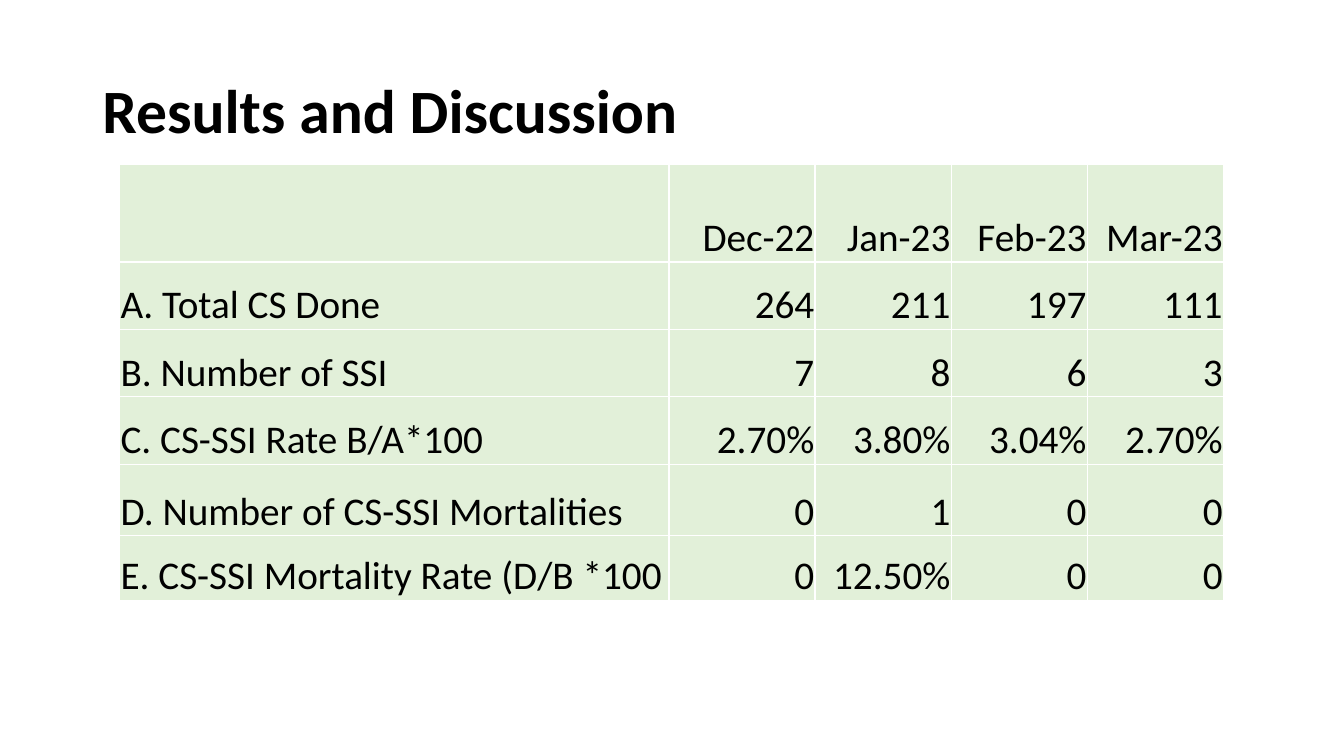
from dataclasses import dataclass

from lxml.etree import SubElement
from pptx import Presentation
from pptx.dml.color import RGBColor
from pptx.enum.text import MSO_ANCHOR as Anchor, PP_ALIGN as Align
from pptx.oxml.ns import qn
from pptx.util import Cm, Pt


@dataclass(frozen=True)
class Theme:
    font: str = "Calibri"
    text: str = "000000"
    cell: str = "E2F0D9"
    border: str = "FFFFFF"
    title_size: int = 44
    table_size: int = 28
    border_width: int = 1


THEME = Theme()

ROWS = [
    ("", "Dec-22", "Jan-23", "Feb-23", "Mar-23"),
    ("A. Total CS Done", "264", "211", "197", "111"),
    ("B. Number of SSI", "7", "8", "6", "3"),
    ("C. CS-SSI Rate B/A*100", "2.70%", "3.80%", "3.04%", "2.70%"),
    ("D. Number of CS-SSI Mortalities", "0", "1", "0", "0"),
    ("E. CS-SSI Mortality Rate (D/B *100", "0", "12.50%", "0", "0"),
]
COLUMN_WIDTHS = [13.84, 3.68, 3.43, 3.43, 3.43]
ROW_HEIGHTS = [2.46, 1.7, 1.7, 1.7, 1.8, 1.63]


def write_text(frame, text, *, size, bold=False, align=Align.LEFT, spacing=None):
    paragraph = frame.paragraphs[0]
    paragraph.alignment = align
    paragraph.line_spacing = spacing
    run = paragraph.add_run()
    run.text = text
    run.font.name = THEME.font
    run.font.size = Pt(size)
    run.font.bold = bold
    run.font.color.rgb = RGBColor.from_string(THEME.text)


def add_title(slide, text):
    box = slide.shapes.add_textbox(Cm(2.33), Cm(1.02), Cm(29.21), Cm(3.68))
    box.text_frame.word_wrap = True
    box.text_frame.vertical_anchor = Anchor.MIDDLE
    write_text(box.text_frame, text, size=THEME.title_size, bold=True, spacing=0.9)


def add_borders(cell):
    """Draw all four sides; the schema wants them ahead of the cell's fill."""
    properties = cell._tc.get_or_add_tcPr()
    for index, side in enumerate(("lnL", "lnR", "lnT", "lnB")):
        line = SubElement(properties, qn(f"a:{side}"), w=str(Pt(THEME.border_width)))
        fill = SubElement(line, qn("a:solidFill"))
        SubElement(fill, qn("a:srgbClr"), val=THEME.border)
        properties.insert(index, line)


def format_cell(cell):
    cell.vertical_anchor = Anchor.BOTTOM
    cell.margin_left = cell.margin_right = cell.margin_top = Cm(0.02)
    cell.margin_bottom = 0
    cell.fill.solid()
    cell.fill.fore_color.rgb = RGBColor.from_string(THEME.cell)
    add_borders(cell)


def add_results_table(slide):
    table = slide.shapes.add_table(
        len(ROWS), len(COLUMN_WIDTHS), Cm(3.02), Cm(4.14),
        Cm(sum(COLUMN_WIDTHS)), Cm(sum(ROW_HEIGHTS)),
    ).table
    table.first_row = table.horz_banding = False
    for column, width in zip(table.columns, COLUMN_WIDTHS):
        column.width = Cm(width)
    for row, height, values in zip(table.rows, ROW_HEIGHTS, ROWS):
        row.height = Cm(height)
        for index, (cell, value) in enumerate(zip(row.cells, values)):
            format_cell(cell)
            if value:
                align = Align.RIGHT if index else Align.LEFT
                write_text(cell.text_frame, value, size=THEME.table_size, align=align)


def main():
    presentation = Presentation()
    presentation.slide_width = Cm(33.87)
    presentation.slide_height = Cm(19.05)
    slide = presentation.slides.add_slide(presentation.slide_layouts[6])
    add_title(slide, "Results and Discussion")
    add_results_table(slide)
    presentation.save("out.pptx")


if __name__ == "__main__":
    main()
